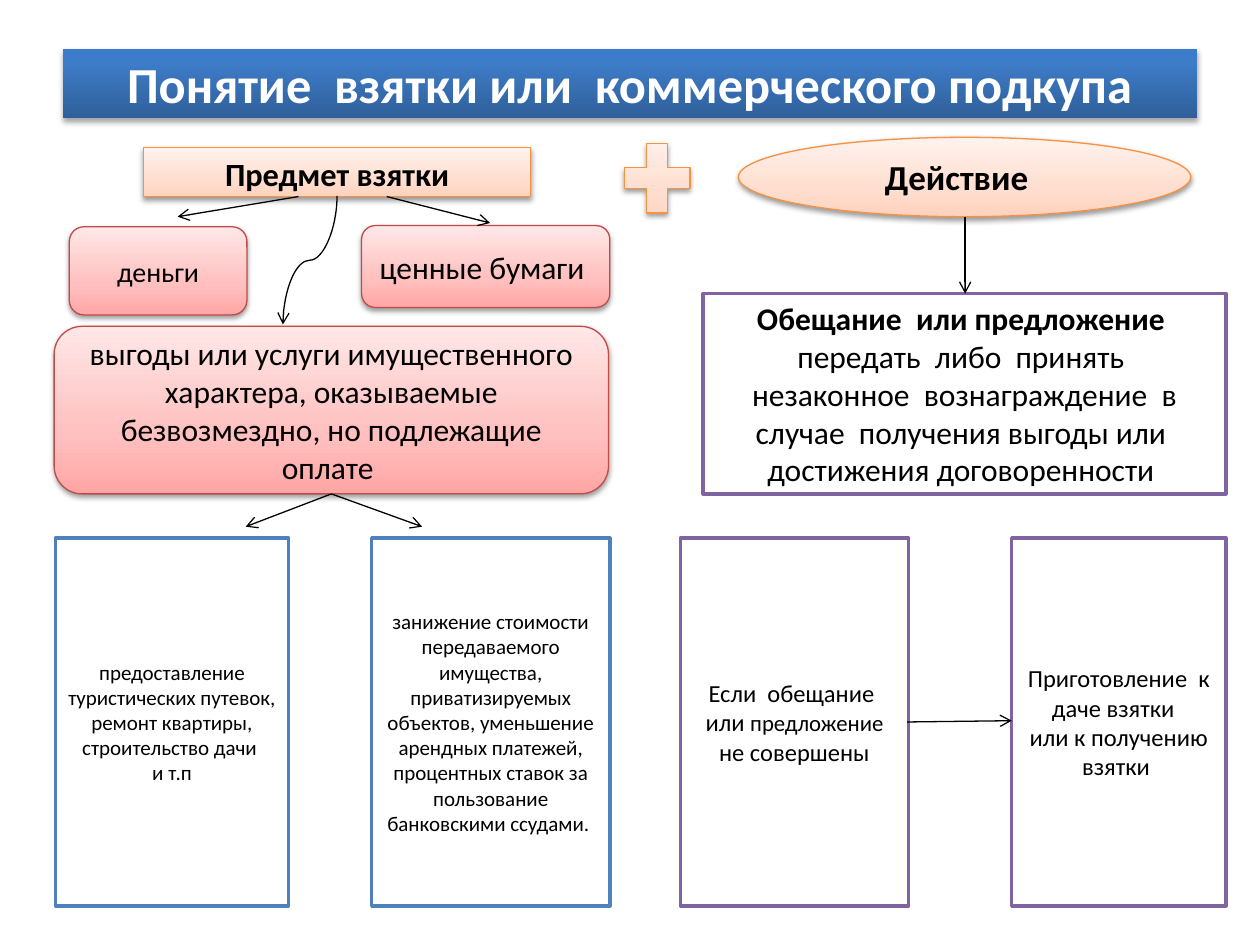
from lxml import etree
from pptx import Presentation
from pptx import util as u
from pptx.dml.color import RGBColor
from pptx.enum import shapes, text
from pptx.oxml.ns import qn

COLORS = {
    "white": "FFFFFF",
    "black": "000000",
    "orange": "F69240",
    "red": "BF4C48",
    "blue": "4F81BD",
    "purple": "8064A2",
}
GRADIENTS = {
    "blue": [(0, "2F5F99"), (80, "3D7CC7"), (100, "3A7CCB")],
    "orange": [(0, "FFD2BD"), (35, "FFDED0"), (100, "FFF2ED")],
    "red": [(0, "FFA6A5"), (35, "FFC0BF"), (100, "FFE7E7")],
}
FONT = "Calibri"
KINDS = shapes.MSO_SHAPE
LOWER_TOP, LOWER_HEIGHT = 4.27, 2.92


def color(name):
    """Return the named colour."""
    return RGBColor.from_string(COLORS[name])


def add_color(parent, value):
    """Append a hex colour to an XML parent and return it."""
    return etree.SubElement(parent, qn("a:srgbClr"), val=value)


def fill_gradient(shape, stops):
    """Fill a shape with stops that run from bottom to top."""
    shape.fill.gradient()
    shape.fill.gradient_angle = 90
    stop_list = shape._element.spPr.find(".//" + qn("a:gsLst"))
    for old in list(stop_list):
        stop_list.remove(old)
    for position, value in stops:
        stop = etree.SubElement(stop_list, qn("a:gs"), pos=str(position * 1000))
        add_color(stop, value)


def add_shadow(shape, distance, opacity):
    """Give a shape a soft shadow that falls straight down."""
    effects = shape._element.spPr.find(qn("a:effectLst"))
    shadow = etree.SubElement(
        effects, qn("a:outerShdw"), blurRad=str(u.Pt(3.1)), dist=str(u.Pt(distance)),
        dir="5400000", rotWithShape="0")
    tint = add_color(shadow, COLORS["black"])
    etree.SubElement(tint, qn("a:alpha"), val=str(opacity * 1000))


def write(para, content, size, bold=False, ink="black"):
    """Add text to a paragraph, with a line break at each newline."""
    for index, line in enumerate(content.split("\n")):
        if index:
            para.add_line_break()
        span = para.add_run()
        span.text = line
        span.font.name = FONT
        span.font.size = u.Pt(size)
        span.font.bold = bold
        span.font.color.rgb = color(ink)


def add_box(page, kind, area, line=None, width=0.75):
    """Add a shape with an outline and return it with its centred paragraph."""
    box = page.shapes.add_shape(kind, *(u.Inches(value) for value in area))
    box.shadow.inherit = False
    if line:
        box.line.color.rgb = color(line)
        box.line.width = u.Pt(width)
    else:
        box.line.fill.background()
    box.text_frame.word_wrap = True
    box.text_frame.vertical_anchor = text.MSO_ANCHOR.MIDDLE
    para = box.text_frame.paragraphs[0]
    para.alignment = text.PP_ALIGN.CENTER
    return box, para


def add_glossy(page, kind, area, theme):
    """Add a gradient shape with a shadow and return it with its paragraph."""
    box, para = add_box(page, kind, area, line=theme)
    fill_gradient(box, GRADIENTS[theme])
    add_shadow(box, 1.6, 38)
    return box, para


def add_frame(page, area, line):
    """Add a white framed rectangle and return its paragraph."""
    box, para = add_box(page, KINDS.RECTANGLE, area, line, width=2)
    box.fill.solid()
    box.fill.fore_color.rgb = color("white")
    return para


def add_arrow(page, start, end, kind=shapes.MSO_CONNECTOR.STRAIGHT, turn=0):
    """Add a thin black arrow, turned clockwise by the given degrees."""
    arrow = page.shapes.add_connector(kind, *(u.Inches(value) for value in start + end))
    arrow.line.color.rgb = color("black")
    arrow.line.width = u.Pt(0.75)
    etree.SubElement(arrow.line._get_or_add_ln(), qn("a:tailEnd"), type="arrow")
    properties = arrow._element.spPr
    etree.SubElement(properties, qn("a:effectLst"))
    if turn:
        properties.find(qn("a:xfrm")).set("rot", str(turn * 60000))


def add_title(page):
    """Add the blue title bar."""
    bar, para = add_box(page, KINDS.RECTANGLE, (0.5, 0.39, 9, 0.55))
    fill_gradient(bar, GRADIENTS["blue"])
    add_shadow(bar, 1.8, 35)
    write(para, "Понятие  взятки или  коммерческого подкупа", 28.8, bold=True, ink="white")


def add_subject(page):
    """Add the left branch: what a bribe consists of."""
    heading, para = add_glossy(page, KINDS.RECTANGLE, (1.14, 1.17, 3.07, 0.39), "orange")
    heading.text_frame.vertical_anchor = text.MSO_ANCHOR.TOP
    write(para, "Предмет взятки", 18.5, bold=True)

    items = [
        ((0.55, 1.8, 1.41, 0.7), "деньги", 16),
        ((2.87, 1.79, 1.97, 0.65), "ценные бумаги ", 18),
        ((0.43, 2.59, 4.4, 1.33), "выгоды или услуги имущественного характера, оказываемые "
         "безвозмездно, но подлежащие оплате ", 18),
    ]
    for area, content, size in items:
        para = add_glossy(page, KINDS.ROUNDED_RECTANGLE, area, "red")[1]
        write(para, content, size)

    examples = [
        (0.44, 1.85, "предоставление туристических путевок, ремонт квартиры, "
         "строительство дачи \nи т.п"),
        (2.95, 1.89, "занижение стоимости передаваемого имущества, приватизируемых "
         "объектов, уменьшение арендных платежей, процентных ставок за пользование "
         "банковскими ссудами. "),
    ]
    for left, width, content in examples:
        write(add_frame(page, (left, LOWER_TOP, width, LOWER_HEIGHT), "blue"), content, 12)

    add_arrow(page, (2.37, 1.56), (1.41, 1.72))
    add_arrow(page, (3.07, 1.56), (3.89, 1.77))
    add_arrow(page, (1.95, 1.85), (2.97, 2.28), shapes.MSO_CONNECTOR.CURVE, turn=90)
    for end in ((3.35, 4.18), (1.95, 4.18)):
        add_arrow(page, (2.63, 3.92), end)


def add_action(page):
    """Add the right branch: the act and its outcome."""
    para = add_glossy(page, KINDS.OVAL, (5.86, 1.09, 3.59, 0.63), "orange")[1]
    write(para, "Действие  ", 20, bold=True)

    para = add_frame(page, (5.58, 2.33, 4.15, 1.59), "purple")
    write(para, "Обещание  или предложение  ", 18, bold=True)
    write(para, "передать  либо  принять  незаконное  вознаграждение  в случае  "
          "получения выгоды или  достижения договоренности ", 18)

    para = add_frame(page, (5.4, LOWER_TOP, 1.81, LOWER_HEIGHT), "purple")
    write(para, "Если  обещание  или ", 14)
    write(para, "предложение", 13)
    write(para, " не совершены", 14)

    para = add_frame(page, (8.03, LOWER_TOP, 1.7, LOWER_HEIGHT), "purple")
    write(para, "Приготовление  к даче взятки  \nили к получению взятки ", 14)

    add_arrow(page, (7.66, 1.72), (7.66, 2.33))
    add_arrow(page, (7.2, 5.73), (8.03, 5.72))


def main():
    """Build the slide and save it."""
    deck = Presentation()
    deck.slide_width, deck.slide_height = u.Inches(10), u.Inches(7.5)
    page = deck.slides.add_slide(deck.slide_layouts[6])
    add_title(page)
    add_subject(page)
    add_glossy(page, KINDS.MATH_PLUS, (4.86, 1.04, 0.71, 0.75), "orange")
    add_action(page)
    deck.save("out.pptx")


if __name__ == "__main__":
    main()
